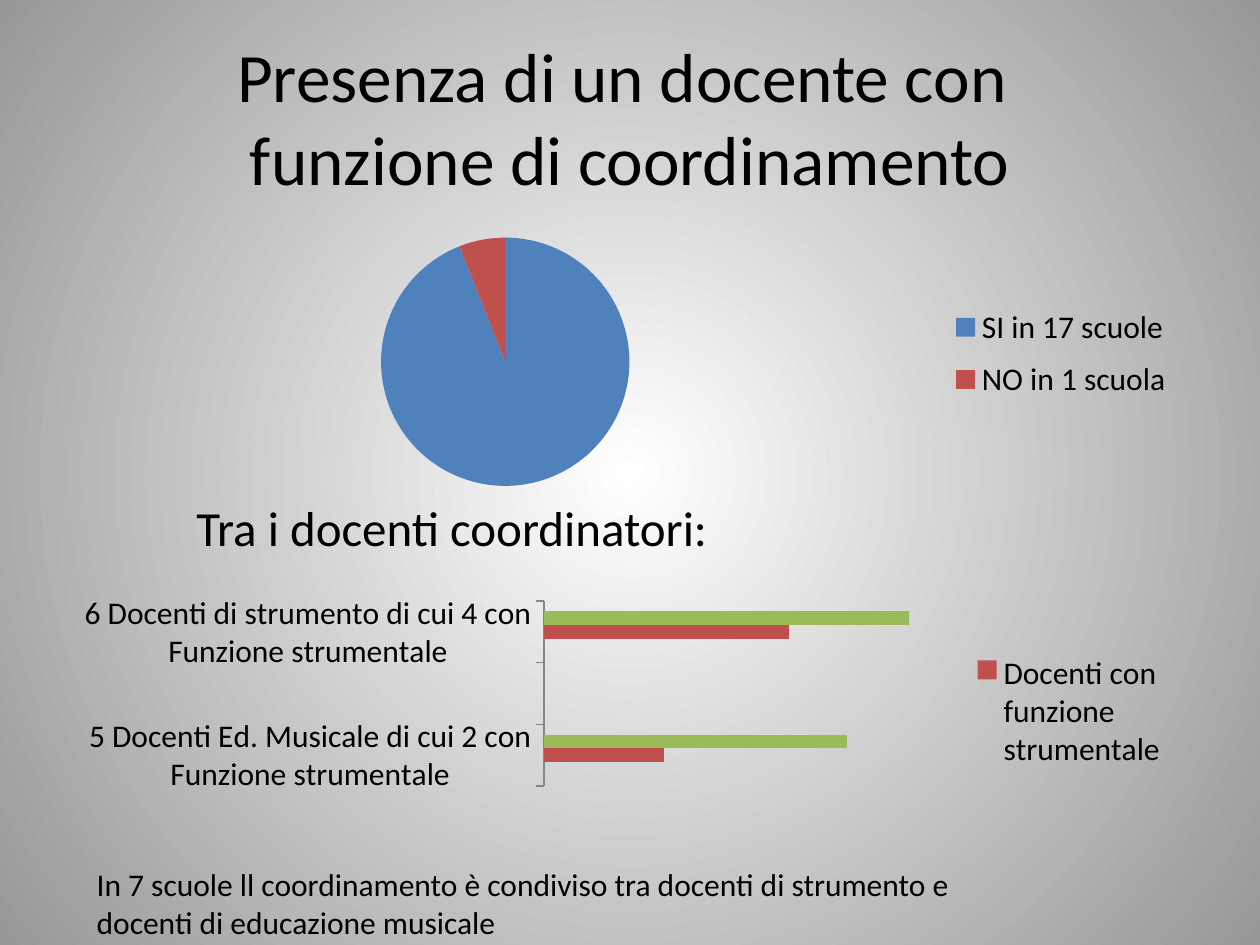
from lxml import etree
from pptx import Presentation
from pptx.chart.data import CategoryChartData
from pptx.dml.color import RGBColor
from pptx.enum.chart import XL_CHART_TYPE, XL_LEGEND_POSITION, XL_TICK_LABEL_POSITION, XL_TICK_MARK
from pptx.enum.text import MSO_ANCHOR, PP_ALIGN
from pptx.oxml.ns import qn
from pptx.util import Cm, Pt

FONT = "Calibri"
BLACK = RGBColor(0x00, 0x00, 0x00)
WHITE = RGBColor(0xFF, 0xFF, 0xFF)
EDGE_GRAY = RGBColor(0x97, 0x97, 0x97)
AXIS_GRAY = RGBColor(0x86, 0x86, 0x86)
BLUE = RGBColor(0x4F, 0x81, 0xBD)
RED = RGBColor(0xC0, 0x50, 0x4D)
GREEN = RGBColor(0x9B, 0xBB, 0x59)

# Content; boxes are left, top, width, height in centimetres
TITLE = "Presenza di un docente con \vfunzione di coordinamento"
SUBTITLE = "Tra i docenti coordinatori:"
NOTE = ("In 7 scuole ll coordinamento è condiviso tra docenti di strumento e\n"
        "docenti di educazione musicale")

PIE_CATEGORIES = ["SI in 17 scuole", "NO in 1 scuola"]
PIE_SERIES = [("Series 1", (94, 6))]
PIE_COLORS = [BLUE, RED]

BAR_CATEGORIES = [
    "5 Docenti Ed. Musicale di cui 2 con Funzione strumentale",
    "",
    "6 Docenti di strumento di cui 4 con Funzione strumentale",
]
BAR_SERIES = [
    ("Series 1", (None, None, None)),
    ("Docenti con funzione strumentale", (33, None, 67)),
    ("Series 3", (83, None, 100)),
]
BAR_COLORS = [BLUE, RED, GREEN]
HIDDEN_LEGEND_ENTRIES = [0, 2]


def add_text(slide, text, box, size, align=PP_ALIGN.LEFT, anchor=MSO_ANCHOR.TOP, wrap=False):
    shape = slide.shapes.add_textbox(*map(Cm, box))
    frame = shape.text_frame
    frame.word_wrap = wrap
    frame.vertical_anchor = anchor
    frame.text = text
    for paragraph in frame.paragraphs:
        paragraph.alignment = align
        for run in paragraph.runs:
            run.font.name = FONT
            run.font.size = Pt(size)
            run.font.color.rgb = BLACK


def make_layout(fractions, inner=False):
    """Manual chart layout from left, top, width and height fractions."""
    layout = etree.Element(qn("c:layout"))
    manual = etree.SubElement(layout, qn("c:manualLayout"))
    settings = [("layoutTarget", "inner")] if inner else []
    settings += [("xMode", "edge"), ("yMode", "edge")]
    settings += zip("xywh", fractions)
    for tag, value in settings:
        etree.SubElement(manual, qn(f"c:{tag}")).set("val", str(value))
    return layout


def add_chart(slide, kind, categories, series, box, plot_area, legend_area, hidden=()):
    data = CategoryChartData()
    data.categories = categories
    for name, values in series:
        data.add_series(name, values)
    chart = slide.shapes.add_chart(kind, *map(Cm, box), data).chart
    chart.has_title = False
    chart.font.name = FONT
    chart.font.size = Pt(18)
    chart.font.color.rgb = BLACK

    # Plot position
    area = chart.element.find(".//" + qn("c:plotArea"))
    for old_layout in area.findall(qn("c:layout")):
        area.remove(old_layout)
    area.insert(0, make_layout(plot_area, inner=True))

    # Legend position and hidden entries
    chart.has_legend = True
    chart.legend.position = XL_LEGEND_POSITION.RIGHT
    chart.legend.include_in_layout = False
    legend = chart.element.find(".//" + qn("c:legend"))
    for old_layout in legend.findall(qn("c:layout")):
        legend.remove(old_layout)
    previous = legend.find(qn("c:legendPos"))
    for index in hidden:
        entry = etree.Element(qn("c:legendEntry"))
        etree.SubElement(entry, qn("c:idx")).set("val", str(index))
        etree.SubElement(entry, qn("c:delete")).set("val", "1")
        previous.addnext(entry)
        previous = entry
    previous.addnext(make_layout(legend_area))
    return chart


def fill_solid(part, color):
    part.format.fill.solid()
    part.format.fill.fore_color.rgb = color


def set_background(slide):
    fill = slide.background.fill
    fill.gradient()
    for stop, color in zip(fill.gradient_stops, (WHITE, EDGE_GRAY)):
        stop.color.rgb = color
    gradient = slide.element.find(".//" + qn("a:gradFill"))
    linear = gradient.find(qn("a:lin"))
    circle = etree.Element(qn("a:path"), {"path": "circle"})
    center = etree.SubElement(circle, qn("a:fillToRect"))
    for side in "ltrb":
        center.set(side, "50000")
    gradient.replace(linear, circle)


def main():
    presentation = Presentation()
    presentation.slide_width, presentation.slide_height = Cm(25.4), Cm(19.05)
    slide = presentation.slides.add_slide(presentation.slide_layouts[6])
    set_background(slide)

    add_text(slide, TITLE, (1.27, 0.76, 22.86, 3.18), 39.6,
             align=PP_ALIGN.CENTER, anchor=MSO_ANCHOR.MIDDLE, wrap=True)

    # Pie chart
    pie = add_chart(slide, XL_CHART_TYPE.PIE, PIE_CATEGORIES, PIE_SERIES,
                    (1.27, 4.45, 22.86, 5.69),
                    (0.28, 0.06, 0.22, 0.88), (0.78, 0.26, 0.2, 0.42))
    pie.plots[0].vary_by_categories = True
    for index, color in enumerate(PIE_COLORS):
        fill_solid(pie.plots[0].series[0].points[index], color)

    add_text(slide, SUBTITLE, (3.71, 9.91, 10.92, 1.45), 28)

    # Bar chart
    bars = add_chart(slide, XL_CHART_TYPE.BAR_CLUSTERED, BAR_CATEGORIES, BAR_SERIES,
                     (1.3, 11.91, 23.01, 4.19),
                     (0.42, 0.05, 0.32, 0.89), (0.78, 0.28, 0.2, 0.6),
                     hidden=HIDDEN_LEGEND_ENTRIES)
    plot = bars.plots[0]
    plot.vary_by_categories = False
    plot.gap_width = 150
    for series, color in zip(plot.series, BAR_COLORS):
        fill_solid(series, color)
    bars.category_axis.major_tick_mark = XL_TICK_MARK.OUTSIDE
    bars.category_axis.tick_label_position = XL_TICK_LABEL_POSITION.NEXT_TO_AXIS
    bars.category_axis.format.line.color.rgb = AXIS_GRAY
    bars.category_axis.format.line.width = Pt(0.75)
    bars.value_axis.minimum_scale = 0
    bars.value_axis.maximum_scale = 100
    bars.value_axis.has_major_gridlines = False
    bars.value_axis.visible = False

    add_text(slide, NOTE, (1.7, 17.32, 18.21, 1.8), 18)
    presentation.save("out.pptx")


if __name__ == "__main__":
    main()
